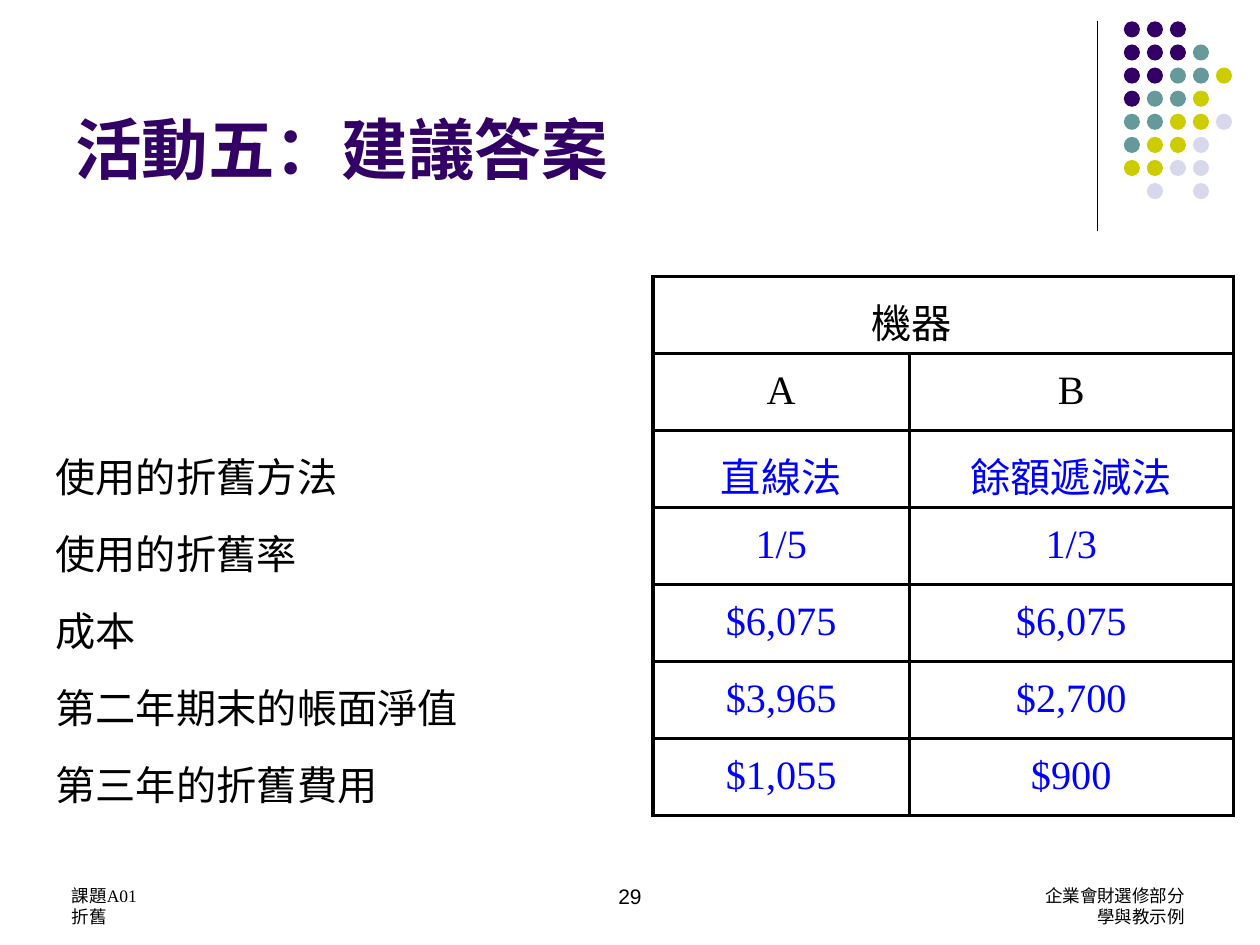
import pptx
import pptx.util
import pptx.dml.color
import pptx.enum.shapes
import pptx.enum.text
import pptx.oxml.ns
from dataclasses import dataclass
from lxml import etree

Pt = pptx.util.Pt
RGB = pptx.dml.color.RGBColor.from_string
Align = pptx.enum.text.PP_ALIGN
Anchor = pptx.enum.text.MSO_ANCHOR
Shape = pptx.enum.shapes.MSO_SHAPE
qn = pptx.oxml.ns.qn


@dataclass
class Theme:
    ink: str = "000000"
    navy: str = "330066"
    teal: str = "669999"
    lime: str = "CCCC00"
    pale: str = "D8D8EC"
    blue: str = "0000FF"
    white: str = "FFFFFF"
    sans: str = "Arial"
    serif: str = "Times New Roman"
    asian: str = "Noto Sans CJK TC"
    title: float = 38
    body: float = 23
    page: float = 12
    foot: float = 10


theme = Theme()


def style(para, size, color, face, align=Align.LEFT, bold=False):
    para.alignment = align
    for run in para.runs:
        font = run.font
        font.size, font.bold, font.name = Pt(size), bold, face
        font.color.rgb = RGB(color)
        east = etree.SubElement(font._element, qn("a:ea"))
        east.set("typeface", theme.asian)


def add_text(left, top, width, height, text):
    frame = slide.shapes.add_textbox(Pt(left), Pt(top), Pt(width), Pt(height)).text_frame
    frame.word_wrap = True
    frame.text = text
    return frame


deck = pptx.Presentation()
deck.slide_width, deck.slide_height = Pt(720), Pt(540)
slide = deck.slides.add_slide(deck.slide_layouts[6])

# Rule beside the dots
rule = slide.shapes.add_connector(
    pptx.enum.shapes.MSO_CONNECTOR.STRAIGHT, Pt(627), Pt(12), Pt(627), Pt(132))
rule.line.color.rgb = RGB(theme.ink)
rule.line.width = Pt(0.75)
etree.SubElement(rule._element.spPr, qn("a:effectLst"))

# Corner dots, one letter per colour
hues = {"n": theme.navy, "t": theme.teal, "l": theme.lime, "p": theme.pale}
dots = ["nnn", "nnnt", "nnttl", "nttl", "ttllp", "tllp", "llpp", ".p.p"]
for row, line in enumerate(dots):
    for col, key in enumerate(line):
        if key in hues:
            dot = slide.shapes.add_shape(
                Shape.OVAL, Pt(642.2 + 13.15 * col), Pt(12.2 + 13.2 * row), Pt(9.2), Pt(9.2))
            dot.shadow.inherit = False
            dot.fill.solid()
            dot.fill.fore_color.rgb = RGB(hues[key])
            dot.line.fill.background()

# Title
frame = add_text(36, 9, 594, 102, "活動五：建議答案")
frame.vertical_anchor = Anchor.BOTTOM
style(frame.paragraphs[0], theme.title, theme.navy, theme.sans, bold=True)

# Table: labels on the left, two machines on the right
rows = [
    ("", "機器", ""),
    ("", "A", "B"),
    ("使用的折舊方法", "直線法", "餘額遞減法"),
    ("使用的折舊率", "1/5", "1/3"),
    ("成本", "$6,075", "$6,075"),
    ("第二年期末的帳面淨值", "$3,965", "$2,700"),
    ("第三年的折舊費用", "$1,055", "$900"),
]
widths = [341.5, 146.5, 185]
pitch = 44.05
table = slide.shapes.add_table(
    len(rows), len(widths), Pt(31.7), Pt(158), Pt(sum(widths)), Pt(pitch * len(rows))).table
table.first_row = table.horz_banding = False
for col, width in enumerate(widths):
    table.columns[col].width = Pt(width)
table.cell(0, 1).merge(table.cell(0, 2))

for row, texts in enumerate(rows):
    table.rows[row].height = Pt(pitch)
    for col, text in enumerate(texts):
        cell = table.cell(row, col)
        cell.margin_left = cell.margin_bottom = 0
        cell.margin_right = Pt(36 if cell.is_merge_origin else 0)
        cell.margin_top = Pt(8.5)
        cell.vertical_anchor = Anchor.TOP
        if text:
            cell.text = text
            answer = col > 0 and row > 1
            style(cell.text_frame.paragraphs[0], theme.body,
                  theme.blue if answer else theme.ink, theme.serif,
                  Align.CENTER if col else Align.LEFT)
        if col and row == 0:
            cell.fill.solid()
            cell.fill.fore_color.rgb = RGB(theme.white)
        else:
            cell.fill.background()
        # Borders go ahead of the fill; label cells only touch the grid
        props = cell._tc.get_or_add_tcPr()
        for spot, side in enumerate(("lnL", "lnR", "lnT", "lnB")):
            edge = etree.Element(qn("a:" + side), w=str(Pt(2.1)))
            inner = cell.is_spanned and side == "lnL"
            if (col or side == "lnR") and not inner:
                solid = etree.SubElement(edge, qn("a:solidFill"))
                etree.SubElement(solid, qn("a:srgbClr"), val=theme.ink)
            else:
                etree.SubElement(edge, qn("a:noFill"))
            props.insert(spot, edge)

# Footers
feet = [
    (34, 168, 16, "課題A01\n折舊", theme.foot, theme.serif, Align.LEFT),
    (246, 228, 17.5, "29", theme.page, theme.sans, Align.CENTER),
    (417, 267, 16, "企業會財選修部分\n學與教示例", theme.foot, theme.sans, Align.RIGHT),
]
for left, width, inset, text, size, face, align in feet:
    frame = add_text(left, 490, width, 40, text)
    frame.margin_top = Pt(inset)
    for para in frame.paragraphs:
        para.line_spacing = Pt(12)
        style(para, size, theme.ink, face, align)

deck.save("out.pptx")
